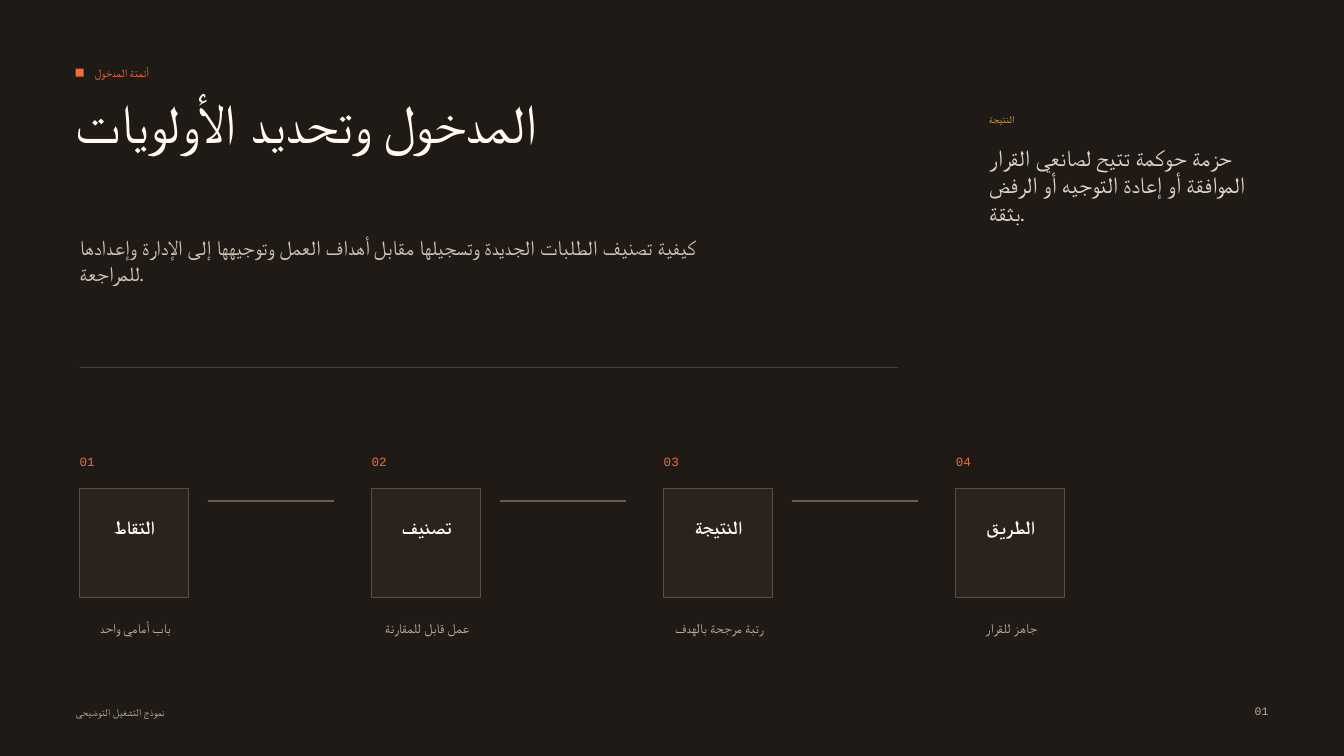
from lxml import etree
from pptx import Presentation
from pptx.dml.color import RGBColor
from pptx.enum.shapes import MSO_CONNECTOR, MSO_SHAPE
from pptx.enum.text import MSO_ANCHOR, PP_ALIGN
from pptx.oxml.ns import qn
from pptx.util import Inches, Pt

RECTANGLE = MSO_SHAPE.RECTANGLE
STRAIGHT = MSO_CONNECTOR.STRAIGHT
LEFT, CENTER, RIGHT = PP_ALIGN.LEFT, PP_ALIGN.CENTER, PP_ALIGN.RIGHT
TOP, MIDDLE = MSO_ANCHOR.TOP, MSO_ANCHOR.MIDDLE
SANS, MONO = "Karla", "Courier New"

COLORS = {
    name: RGBColor.from_string(value)
    for name, value in {
        "background": "201A16",
        "accent": "F26B3A",
        "gold": "D6A84F",
        "heading": "FFF9EF",
        "subtitle": "CFC4B8",
        "outcome": "DDD3C8",
        "caption": "B9ACA0",
        "footer": "B8AEA4",
        "divider": "4C4038",
        "link": "6C5A50",
        "card": "2A221D",
        "card_border": "5B4D44",
    }.items()
}

presentation = Presentation()
presentation.slide_width = Inches(13.33)
presentation.slide_height = Inches(7.5)
slide = presentation.slides.add_slide(presentation.slide_layouts[6])
slide.background.fill.solid()
slide.background.fill.fore_color.rgb = COLORS["background"]


def add_text(text, left, top, width, height, size, color, font_name=SANS,
             align=LEFT, anchor=TOP, bold=False):
    box = slide.shapes.add_textbox(Inches(left), Inches(top), Inches(width), Inches(height))
    frame = box.text_frame
    frame.word_wrap = True
    frame.vertical_anchor = anchor
    frame.margin_left = frame.margin_right = frame.margin_top = frame.margin_bottom = 0
    paragraph = frame.paragraphs[0]
    paragraph.text = text
    paragraph.alignment = align
    paragraph.font.name = font_name
    paragraph.font.size = Pt(size)
    paragraph.font.bold = bold
    paragraph.font.color.rgb = COLORS[color]


def add_rule(left, y, width, weight, color):
    """Draw a horizontal line without a shadow."""
    rule = slide.shapes.add_connector(
        STRAIGHT, Inches(left), Inches(y), Inches(left + width), Inches(y))
    rule.line.width = Pt(weight)
    rule.line.color.rgb = COLORS[color]
    etree.SubElement(rule._element.spPr, qn("a:effectLst"))


# Header
marker = slide.shapes.add_shape(RECTANGLE, Inches(0.75), Inches(0.68), Inches(0.08), Inches(0.08))
marker.shadow.inherit = False
marker.fill.solid()
marker.fill.fore_color.rgb = COLORS["accent"]
marker.line.fill.background()
add_text("أتمتة المدخول", 0.94, 0.6, 4.38, 0.25, 8.2, "accent", MONO, anchor=MIDDLE)
add_text("المدخول وتحديد الأولويات", 0.75, 0.88, 7.92, 1.38, 39, "heading")
add_text("كيفية تصنيف الطلبات الجديدة وتسجيلها مقابل أهداف العمل وتوجيهها إلى الإدارة وإعدادها للمراجعة.",
         0.79, 2.33, 6.35, 0.92, 15, "subtitle")
add_rule(0.79, 3.65, 8.12, 0.75, "divider")

# Process steps
steps = [
    ("التقاط", "باب أمامي واحد"),
    ("تصنيف", "عمل قابل للمقارنة"),
    ("النتيجة", "رتبة مرجحة بالهدف"),
    ("الطريق", "جاهز للقرار"),
]
first_left, last_left, card_size = 0.79, 9.48, 1.08
pitch = (last_left - first_left) / (len(steps) - 1)

for index, (name, caption) in enumerate(steps):
    left = first_left + index * pitch
    if index < len(steps) - 1:
        add_rule(left + 1.27, 4.97, 1.25, 1.5, "link")
    add_text(f"{index + 1:02}", left, 4.5, 0.56, 0.25, 9, "accent", MONO)
    card = slide.shapes.add_shape(
        RECTANGLE, Inches(left), Inches(4.85), Inches(card_size), Inches(card_size))
    card.shadow.inherit = False
    card.fill.solid()
    card.fill.fore_color.rgb = COLORS["card"]
    card.line.color.rgb = COLORS["card_border"]
    card.line.width = Pt(0.75)
    add_text(name, left + 0.15, 5.12, 0.79, 0.27, 13.5, "heading", align=CENTER, bold=True)
    add_text(caption, left - 0.19, 6.15, 1.48, 0.25, 9.8, "caption", align=CENTER)

# Outcome
add_text("النتيجة", 9.81, 1.12, 1.15, 0.19, 7.5, "gold", MONO)
add_text("حزمة حوكمة تتيح لصانعي القرار الموافقة أو إعادة التوجيه أو الرفض بثقة.",
         9.81, 1.42, 2.6, 1.67, 16.5, "outcome")

# Footer
add_text("نموذج التشغيل التوضيحي", 0.75, 7, 3.33, 0.19, 7.5, "footer", MONO)
add_text("01", 12.08, 6.98, 0.5, 0.21, 8.2, "footer", MONO, align=RIGHT)

presentation.save("out.pptx")
